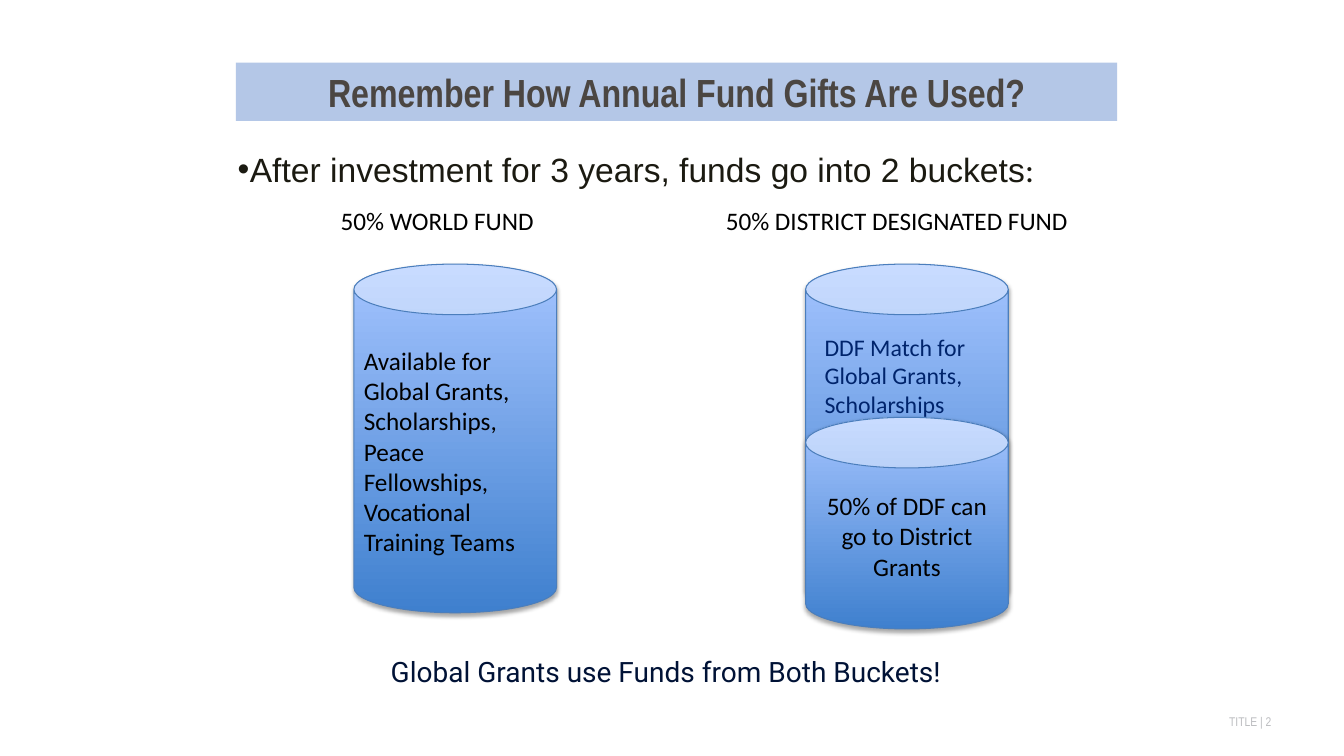
from lxml import etree
from pptx import Presentation
from pptx.dml.color import RGBColor
from pptx.enum.shapes import MSO_SHAPE
from pptx.enum.text import MSO_ANCHOR, PP_ALIGN
from pptx.oxml.ns import qn
from pptx.util import Inches, Pt

LEFT, CENTER, RIGHT = PP_ALIGN.LEFT, PP_ALIGN.CENTER, PP_ALIGN.RIGHT
TOP, MIDDLE = MSO_ANCHOR.TOP, MSO_ANCHOR.MIDDLE
RECTANGLE, CAN = MSO_SHAPE.RECTANGLE, MSO_SHAPE.CAN

BLACK = "000000"
BUCKET_BOTTOM, BUCKET_TOP, BUCKET_EDGE = "3F80CE", "A4C4FF", "4B7EBC"
BUCKET_WIDTH = 2.01
WORLD_LEFT, DISTRICT_LEFT = 3.51, 7.99
BULLET_INDENT = 0.12
DISTRICT_LABEL_TAB = 3.82


def color(hex_string):
    return RGBColor.from_string(hex_string)


def add_span(para, text, size=18, font="Calibri", ink=BLACK, bold=False):
    span = para.add_run()
    span.text = text
    span.font.size = Pt(size)
    span.font.name = font
    span.font.bold = bold
    span.font.color.rgb = color(ink)


def write(shape, text, align=LEFT, anchor=TOP, inset=True, **style):
    frame = shape.text_frame
    frame.word_wrap = True
    frame.vertical_anchor = anchor
    if not inset:
        frame.margin_left = frame.margin_right = Inches(0)
        frame.margin_top = frame.margin_bottom = Inches(0)
    para = frame.paragraphs[0]
    para.alignment = align
    add_span(para, text, **style)
    return para


def add_text(page, place, text, **style):
    box = page.shapes.add_textbox(*map(Inches, place))
    return write(box, text, **style)


def add_title(page, place, text, **style):
    banner = page.shapes.add_shape(RECTANGLE, *map(Inches, place))
    banner.shadow.inherit = False
    banner.fill.solid()
    banner.fill.fore_color.rgb = color("B4C7E7")
    banner.line.fill.background()
    write(banner, text, align=CENTER, anchor=MIDDLE, inset=False, **style)


def add_shadow(shape):
    shape.shadow.inherit = False
    effects = shape._element.spPr.find(qn("a:effectLst"))
    shadow = etree.SubElement(
        effects, qn("a:outerShdw"), blurRad=str(Pt(3.1)), dist=str(Pt(1.8)),
        dir="5400000", rotWithShape="0")
    tint = etree.SubElement(shadow, qn("a:srgbClr"), val=BLACK)
    etree.SubElement(tint, qn("a:alpha"), val="35000")


def add_bucket(page, left, top, height, text="", align=LEFT):
    bucket = page.shapes.add_shape(
        CAN, Inches(left), Inches(top), Inches(BUCKET_WIDTH), Inches(height))
    bucket.fill.gradient()
    bucket.fill.gradient_angle = 90
    for stop, shade in zip(bucket.fill.gradient_stops, (BUCKET_BOTTOM, BUCKET_TOP)):
        stop.color.rgb = color(shade)
    bucket.line.color.rgb = color(BUCKET_EDGE)
    bucket.line.width = Pt(0.75)
    add_shadow(bucket)
    if text:
        write(bucket, text, align=align, anchor=MIDDLE)


def set_bullet(para):
    properties = para._p.get_or_add_pPr()
    properties.set("marL", str(Inches(BULLET_INDENT)))
    properties.set("indent", str(-Inches(BULLET_INDENT)))
    etree.SubElement(properties, qn("a:buFont"), typeface="Arial")
    etree.SubElement(properties, qn("a:buChar"), char="•")


def set_tab(para, position):
    tabs = etree.SubElement(para._p.get_or_add_pPr(), qn("a:tabLst"))
    etree.SubElement(tabs, qn("a:tab"), pos=str(Inches(position)), algn="l")


def main():
    deck = Presentation()
    deck.slide_width, deck.slide_height = Inches(13.33), Inches(7.5)
    page = deck.slides.add_slide(deck.slide_layouts[6])

    add_text(page, (10.33, 7.08, 2.28, 0.15), "TITLE | 2", align=RIGHT,
             inset=False, size=9, font="Arial Narrow", ink="BCBDC0")
    add_title(page, (2.34, 0.62, 8.74, 0.58),
              "Remember How Annual Fund Gifts Are Used?",
              size=28, font="Arial Narrow", ink="4B4642", bold=True)

    intro = add_text(page, (2.26, 1.43, 9, 5.24),
                     "After investment for 3 years, funds go into 2 buckets",
                     size=24, font="Arial", ink="1B1A11")
    add_span(intro, ":", size=24, ink="1B1A11")
    set_bullet(intro)

    add_bucket(page, WORLD_LEFT, 2.62, 3.46,
               "Available for Global Grants, Scholarships, Peace Fellowships, "
               "Vocational Training Teams")
    add_bucket(page, DISTRICT_LEFT, 2.62, 3.46)
    add_bucket(page, DISTRICT_LEFT, 4.14, 2.1,
               "50% of DDF can go to District Grants", align=CENTER)

    labels = add_text(page, (3.28, 1.99, 7.79, 0.4),
                      "50% WORLD FUND\t50% DISTRICT DESIGNATED FUND")
    set_tab(labels, DISTRICT_LABEL_TAB)
    add_text(page, (8.08, 3.25, 1.84, 0.96),
             "DDF Match for Global Grants, Scholarships", size=17, ink="00246C")
    add_text(page, (3.51, 6.44, 6.19, 0.44),
             "Global Grants use Funds from Both Buckets!",
             align=CENTER, size=20, font="Roboto", ink="001236")

    deck.save("out.pptx")


if __name__ == "__main__":
    main()
